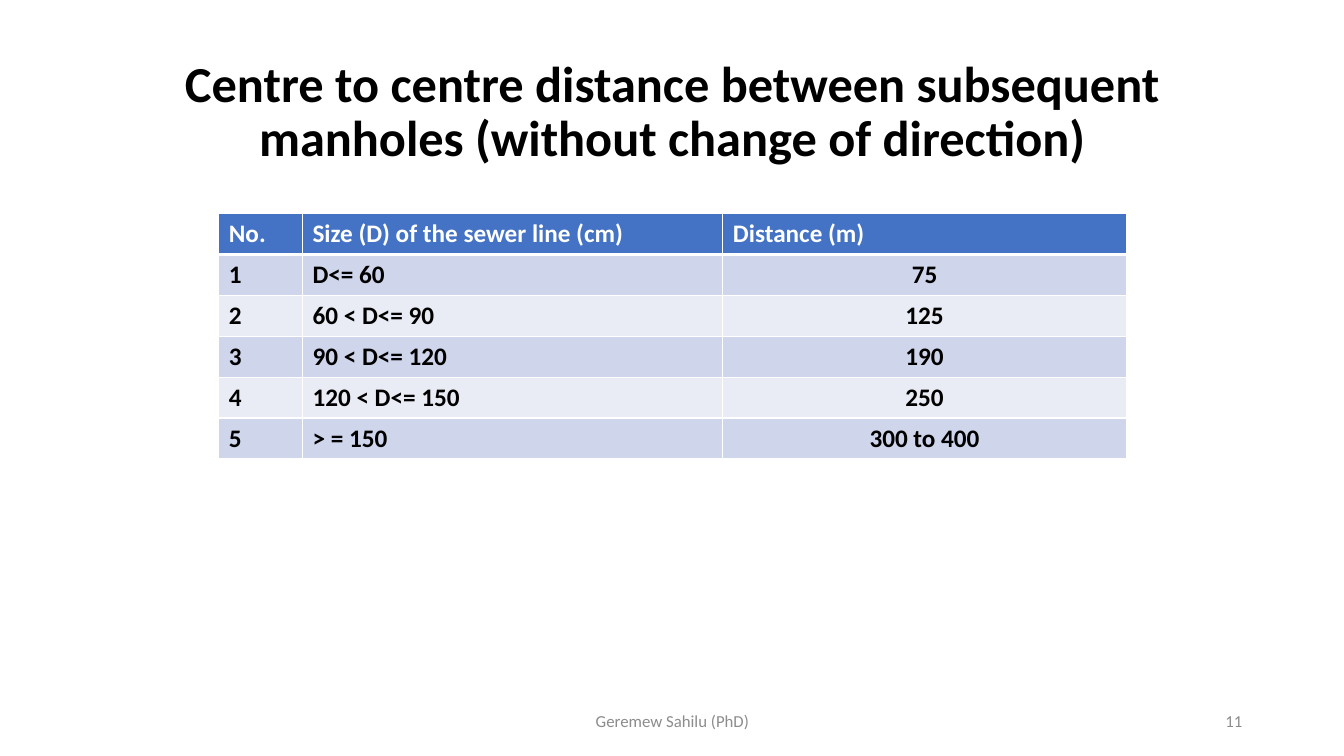
from lxml import etree
from pptx import Presentation
from pptx.dml.color import RGBColor
from pptx.enum.text import MSO_ANCHOR, PP_ALIGN
from pptx.oxml.ns import qn
from pptx.util import Inches, Pt

TITLE = "Centre to centre distance between subsequent manholes (without change of direction)"
ROWS = [
    ("No.", "Size (D) of the sewer line (cm)", "Distance (m)"),
    ("1", "D<= 60", "75"),
    ("2", "60 < D<= 90", "125"),
    ("3", "90 < D<= 120", "190"),
    ("4", "120 < D<= 150", "250"),
    ("5", "> = 150", "300 to 400"),
]
COLUMN_WIDTHS = (0.83, 4.17, 4)
ROW_HEIGHT = 0.405

LEFT, CENTER, RIGHT = PP_ALIGN.LEFT, PP_ALIGN.CENTER, PP_ALIGN.RIGHT
MIDDLE = MSO_ANCHOR.MIDDLE
FOOTERS = [
    ("Geremew Sahilu (PhD)", 4.42, 4.5, CENTER),
    ("11", 9.42, 3, RIGHT),
]

FONT = "Calibri"
BLACK = RGBColor(0x00, 0x00, 0x00)
WHITE = RGBColor(0xFF, 0xFF, 0xFF)
GRAY = RGBColor(0x8C, 0x8C, 0x8C)
HEADER_BLUE = RGBColor(0x44, 0x72, 0xC4)
BAND_DARK = RGBColor(0xCF, 0xD5, 0xEA)
BAND_LIGHT = RGBColor(0xE9, 0xEB, 0xF5)


def write(frame, text, size, color, align, bold=False):
    frame.text = text
    frame.word_wrap = True
    para = frame.paragraphs[0]
    para.alignment = align
    font = para.font
    font.name, font.size, font.bold = FONT, Pt(size), bold
    font.color.rgb = color
    return para


def add_border(cell, side, points):
    properties = cell._tc.get_or_add_tcPr()
    line = etree.SubElement(properties, qn(f"a:ln{side}"), w=str(Pt(points)))
    fill = etree.SubElement(line, qn("a:solidFill"))
    etree.SubElement(fill, qn("a:srgbClr"), val=str(WHITE))


def add_title(page):
    title = page.shapes.title
    title.left, title.top = Inches(0.92), Inches(0.4)
    title.width, title.height = Inches(11.5), Inches(1.45)
    title.text_frame.vertical_anchor = MIDDLE
    para = write(title.text_frame, TITLE, 36, BLACK, CENTER, bold=True)
    para.line_spacing = 0.9


def add_distance_table(page):
    table = page.shapes.add_table(
        len(ROWS), len(COLUMN_WIDTHS), Inches(2.17), Inches(2.12),
        Inches(sum(COLUMN_WIDTHS)), Inches(ROW_HEIGHT * len(ROWS)),
    ).table
    for column, width in zip(table.columns, COLUMN_WIDTHS):
        column.width = Inches(width)
    for r, values in enumerate(ROWS):
        table.rows[r].height = Inches(ROW_HEIGHT)
        header = r == 0
        band = HEADER_BLUE if header else BAND_DARK if r % 2 else BAND_LIGHT
        for c, value in enumerate(values):
            cell = table.cell(r, c)
            align = CENTER if c == 2 and not header else LEFT
            write(cell.text_frame, value, 18, WHITE if header else BLACK, align, bold=True)
            for side in "LRTB":
                add_border(cell, side, 3 if header and side == "B" else 1)
            cell.fill.solid()
            cell.fill.fore_color.rgb = band


def add_footers(page):
    for text, left, width, align in FOOTERS:
        box = page.shapes.add_textbox(Inches(left), Inches(6.95), Inches(width), Inches(0.4))
        box.text_frame.vertical_anchor = MIDDLE
        write(box.text_frame, text, 12, GRAY, align)


def main():
    deck = Presentation()
    deck.slide_width, deck.slide_height = Inches(13.33), Inches(7.5)
    page = deck.slides.add_slide(deck.slide_layouts[5])
    add_title(page)
    add_distance_table(page)
    add_footers(page)
    deck.save("out.pptx")


if __name__ == "__main__":
    main()
